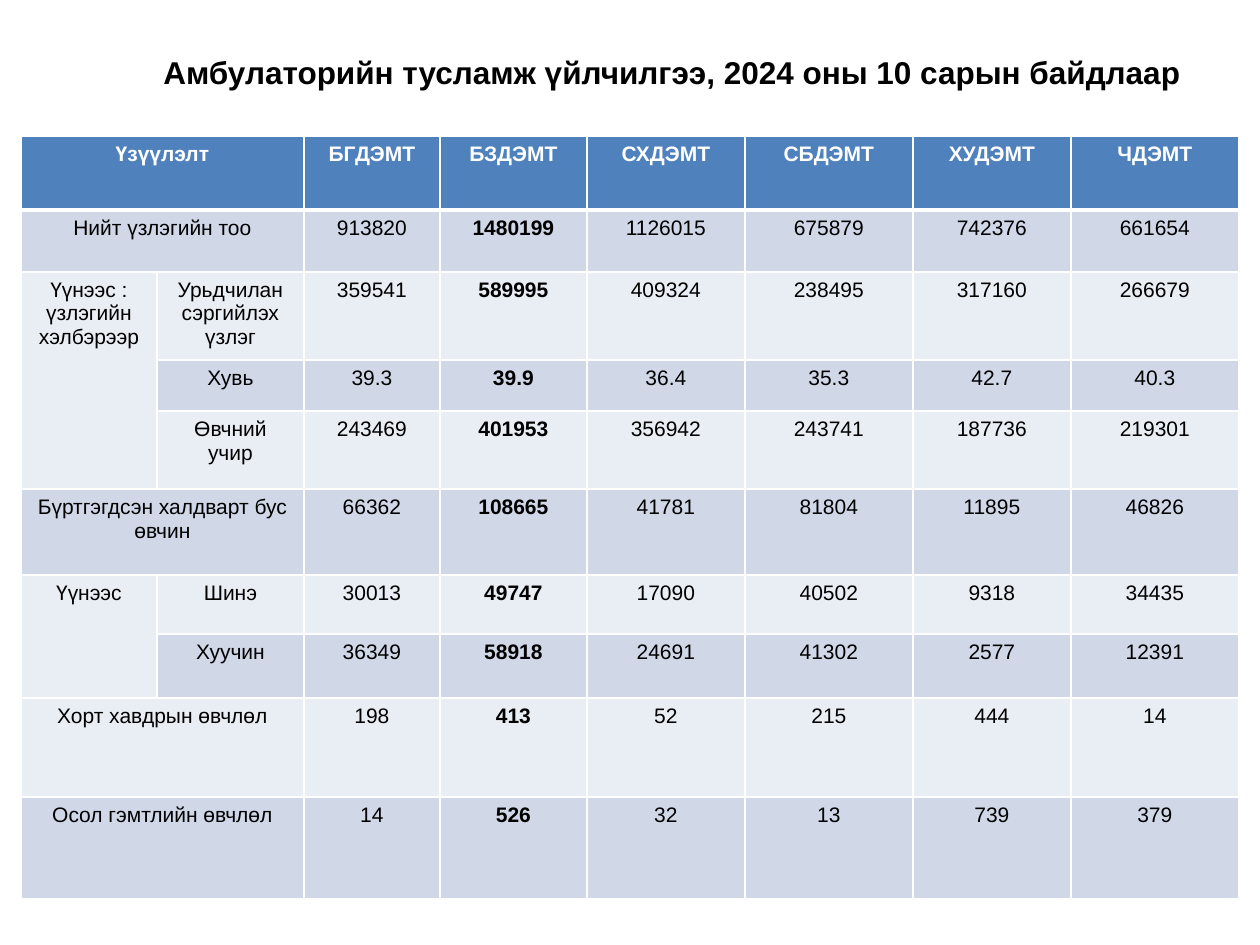
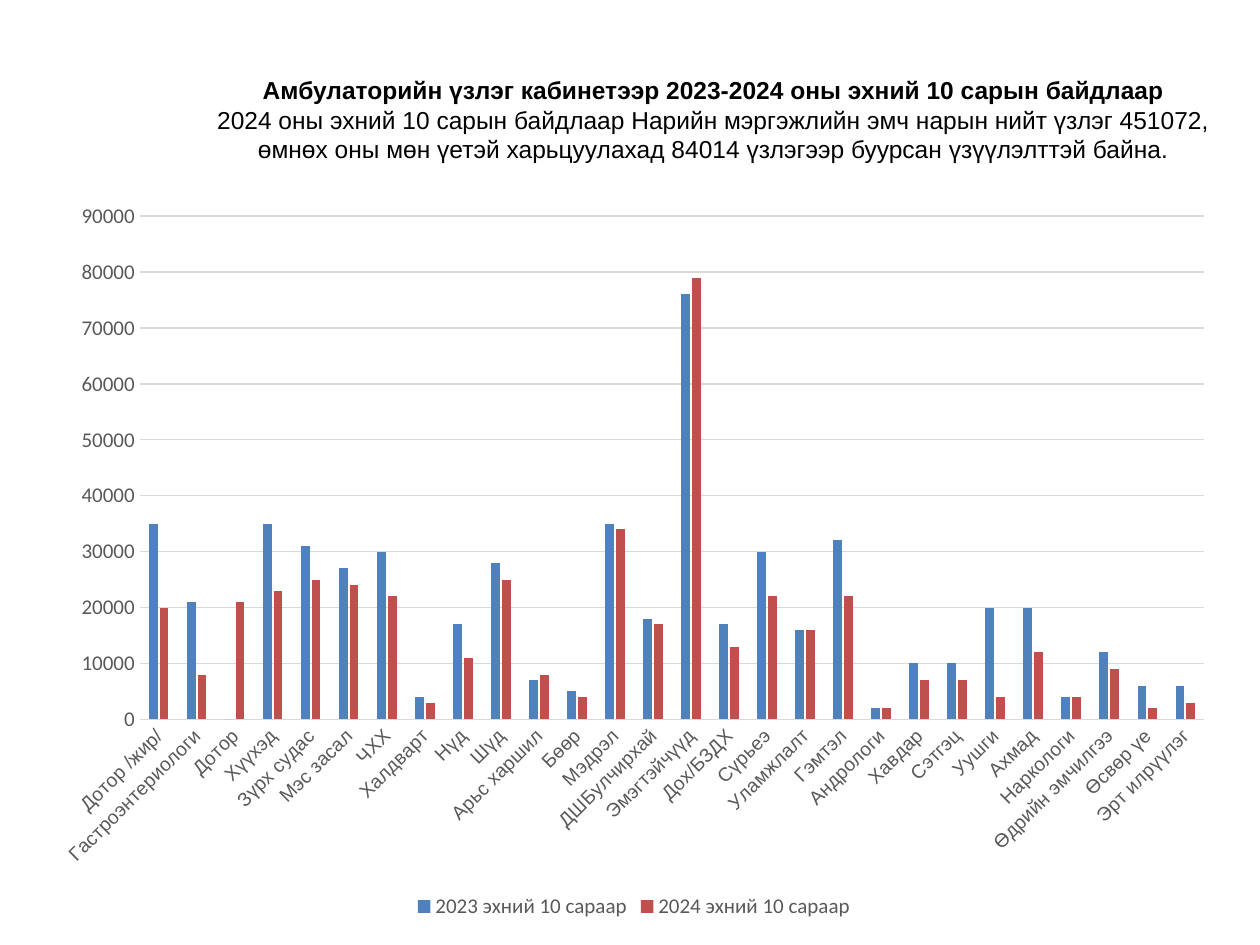
import pptx
import pptx.util
import pptx.chart.data
import pptx.dml.color
import pptx.enum.chart
import pptx.enum.text
import pptx.oxml
import pptx.oxml.ns
from dataclasses import dataclass

PIXELS_PER_INCH = 126
SLIDE_SIZE = (1260, 945)


@dataclass(frozen=True)
class Theme:
    text_font: str = "Arial"
    chart_font: str = "Calibri"
    black: str = "000000"
    white: str = "FFFFFF"
    axis_text: str = "595959"
    grid: str = "D9D9D9"
    header: str = "4F81BD"
    bands: tuple = ("E9EDF4", "D0D8E8")
    series: tuple = ("4F81BD", "C0504D")
    table_title_size: int = 18
    chart_title_size: int = 14
    table_size: int = 12
    category_size: int = 11
    chart_size: int = 12
    border: float = 1
    header_border: float = 3
    grid_line: float = 0.75


THEME = Theme()

TABLE_TITLE = "Амбулаторийн тусламж үйлчилгээ, 2024 оны 10 сарын байдлаар"
TABLE_TITLE_BOX = (105, 33, 1134, 78)
TABLE_ORIGIN = (21, 136)
COLUMN_WIDTHS = [136, 147, 136, 147, 158, 168, 158, 168]
ROW_HEIGHTS = [74, 62, 85, 51, 78, 86, 59, 64, 99, 102]
BOLD_COLUMN = 3
# None marks a cell covered by the one to its left or above it.
TABLE_ROWS = [
    ("Үзүүлэлт", None, "БГДЭМТ", "БЗДЭМТ", "СХДЭМТ", "СБДЭМТ", "ХУДЭМТ", "ЧДЭМТ"),
    ("Нийт үзлэгийн тоо", None, "913820", "1480199", "1126015", "675879", "742376", "661654"),
    ("Үүнээс : үзлэгийн хэлбэрээр", "Урьдчилан сэргийлэх үзлэг",
     "359541", "589995", "409324", "238495", "317160", "266679"),
    (None, "Хувь", "39.3", "39.9", "36.4", "35.3", "42.7", "40.3"),
    (None, "Өвчний учир", "243469", "401953", "356942", "243741", "187736", "219301"),
    ("Бүртгэгдсэн халдварт бус өвчин", None,
     "66362", "108665", "41781", "81804", "11895", "46826"),
    ("Үүнээс", "Шинэ", "30013", "49747", "17090", "40502", "9318", "34435"),
    (None, "Хуучин", "36349", "58918", "24691", "41302", "2577", "12391"),
    ("Хорт хавдрын өвчлөл", None, "198", "413", "52", "215", "444", "14"),
    ("Осол гэмтлийн өвчлөл", None, "14", "526", "32", "13", "739", "379"),
]
MERGES = [((row, 0), (row, 1)) for row in (0, 1, 5, 8, 9)]
MERGES += [((2, 0), (4, 0)), ((6, 0), (7, 0))]

CHART_TITLE = "Амбулаторийн үзлэг кабинетээр 2023-2024 оны эхний 10 сарын байдлаар"
CHART_SUMMARY = (
    "2024 оны эхний 10 сарын байдлаар Нарийн мэргэжлийн эмч нарын нийт үзлэг 451072, "
    "өмнөх оны мөн үетэй харьцуулахад 84014 үзлэгээр буурсан үзүүлэлттэй байна."
)
CHART_TITLE_BOX = (199, 39, 1029, 161)
CHART_BOX = (40, 189, 1188, 735)
SERIES_NAMES = ("2023 эхний 10 сараар", "2024 эхний 10 сараар")
VISITS = [
    ("Дотор /жир/", 35000, 20000),
    ("Гастроэнтериологи", 21000, 8000),
    ("Дотор", 0, 21000),
    ("Хүүхэд", 35000, 23000),
    ("Зүрх судас", 31000, 25000),
    ("Мэс засал", 27000, 24000),
    ("ЧХХ", 30000, 22000),
    ("Халдварт", 4000, 3000),
    ("Нүд", 17000, 11000),
    ("Шүд", 28000, 25000),
    ("Арьс харшил", 7000, 8000),
    ("Бөөр", 5000, 4000),
    ("Мэдрэл", 35000, 34000),
    ("ДШБулчирхай", 18000, 17000),
    ("Эмэгтэйчүүд", 76000, 79000),
    ("Дох/БЗДХ", 17000, 13000),
    ("Сүрьеэ", 30000, 22000),
    ("Уламжлалт", 16000, 16000),
    ("Гэмтэл", 32000, 22000),
    ("Андрологи", 2000, 2000),
    ("Хавдар", 10000, 7000),
    ("Сэтгэц", 10000, 7000),
    ("Уушги", 20000, 4000),
    ("Ахмад", 20000, 12000),
    ("Наркологи", 4000, 4000),
    ("Өдрийн эмчилгээ", 12000, 9000),
    ("Өсвөр үе", 6000, 2000),
    ("Эрт илрүүлэг", 6000, 3000),
]


def emu(pixels):
    return pptx.util.Emu(round(pixels * 914400 / PIXELS_PER_INCH))


def rgb(color):
    return pptx.dml.color.RGBColor.from_string(color)


def style_font(font, size, color, name=THEME.text_font, bold=False):
    font.name = name
    font.size = pptx.util.Pt(size)
    font.color.rgb = rgb(color)
    font.bold = bold


def add_title(slide, box, size, heading, summary=None):
    """Add a centred bold heading, with an optional plain summary under it."""
    frame = slide.shapes.add_textbox(*map(emu, box)).text_frame
    frame.word_wrap = True
    frame.vertical_anchor = pptx.enum.text.MSO_ANCHOR.MIDDLE
    paragraph = frame.paragraphs[0]
    paragraph.alignment = pptx.enum.text.PP_ALIGN.CENTER
    style_font(paragraph.font, size, THEME.black)
    run = paragraph.add_run()
    run.text = heading
    run.font.bold = True
    if summary:
        paragraph.add_line_break()
        paragraph.add_run().text = summary


def set_borders(cell, top, bottom):
    """Draw white borders; top and bottom are widths in points."""
    properties = cell._tc.get_or_add_tcPr()
    widths = {"L": THEME.border, "R": THEME.border, "T": top, "B": bottom}
    for side, width in widths.items():
        properties.append(pptx.oxml.parse_xml(
            f'<a:ln{side} {pptx.oxml.ns.nsdecls("a")} w="{pptx.util.Pt(width)}">'
            f'<a:solidFill><a:srgbClr val="{THEME.white}"/></a:solidFill></a:ln{side}>'
        ))


def fill_cell(cell, row, column, text):
    is_header = row == 0
    set_borders(
        cell,
        top=THEME.header_border if row == 1 else THEME.border,
        bottom=THEME.header_border if is_header else THEME.border,
    )
    cell.fill.solid()
    cell.fill.fore_color.rgb = rgb(THEME.header if is_header else THEME.bands[row % 2])
    if text is not None:
        cell.text = text
    paragraph = cell.text_frame.paragraphs[0]
    paragraph.alignment = pptx.enum.text.PP_ALIGN.CENTER
    style_font(
        paragraph.font,
        THEME.table_size,
        THEME.white if is_header else THEME.black,
        bold=is_header or column == BOLD_COLUMN,
    )


def add_visits_table(slide):
    size = (sum(COLUMN_WIDTHS), sum(ROW_HEIGHTS))
    table = slide.shapes.add_table(
        len(ROW_HEIGHTS), len(COLUMN_WIDTHS), *map(emu, TABLE_ORIGIN + size)
    ).table
    for column, width in zip(table.columns, COLUMN_WIDTHS):
        column.width = emu(width)
    for row, height in zip(table.rows, ROW_HEIGHTS):
        row.height = emu(height)
    for row, texts in enumerate(TABLE_ROWS):
        for column, text in enumerate(texts):
            fill_cell(table.cell(row, column), row, column, text)
    for first, last in MERGES:
        table.cell(*first).merge(table.cell(*last))


def style_line(line):
    line.color.rgb = rgb(THEME.grid)
    line.width = pptx.util.Pt(THEME.grid_line)


def style_axes(chart):
    for axis in (chart.category_axis, chart.value_axis):
        axis.major_tick_mark = pptx.enum.chart.XL_TICK_MARK.NONE
        axis.minor_tick_mark = pptx.enum.chart.XL_TICK_MARK.NONE
    categories, values = chart.category_axis, chart.value_axis
    style_font(categories.tick_labels.font, THEME.category_size, THEME.axis_text)
    categories._element.txPr.find(pptx.oxml.ns.qn("a:bodyPr")).set("rot", "-2700000")
    style_line(categories.format.line)

    style_font(values.tick_labels.font, THEME.chart_size, THEME.axis_text, THEME.chart_font)
    values.minimum_scale, values.maximum_scale, values.major_unit = 0, 90000, 10000
    values.format.line.fill.background()
    style_line(values.major_gridlines.format.line)


def add_visits_chart(slide):
    categories, *series_values = zip(*VISITS)
    data = pptx.chart.data.CategoryChartData()
    data.categories = categories
    for name, values in zip(SERIES_NAMES, series_values):
        data.add_series(name, values)
    chart = slide.shapes.add_chart(
        pptx.enum.chart.XL_CHART_TYPE.COLUMN_CLUSTERED, *map(emu, CHART_BOX), data
    ).chart
    chart.has_title = False
    style_font(chart.font, THEME.chart_size, THEME.axis_text, THEME.chart_font)

    plot = chart.plots[0]
    plot.vary_by_categories = False
    plot.gap_width = 219
    plot.overlap = -27
    for series, color in zip(plot.series, THEME.series):
        series.format.fill.solid()
        series.format.fill.fore_color.rgb = rgb(color)
    style_axes(chart)

    chart.has_legend = True
    chart.legend.position = pptx.enum.chart.XL_LEGEND_POSITION.BOTTOM
    chart.legend.include_in_layout = False
    style_font(chart.legend.font, THEME.chart_size, THEME.axis_text, THEME.chart_font)


def main():
    presentation = pptx.Presentation()
    presentation.slide_width, presentation.slide_height = map(emu, SLIDE_SIZE)
    blank = presentation.slide_layouts[6]

    table_slide = presentation.slides.add_slide(blank)
    add_title(table_slide, TABLE_TITLE_BOX, THEME.table_title_size, TABLE_TITLE)
    add_visits_table(table_slide)

    chart_slide = presentation.slides.add_slide(blank)
    add_title(chart_slide, CHART_TITLE_BOX, THEME.chart_title_size, CHART_TITLE, CHART_SUMMARY)
    add_visits_chart(chart_slide)

    presentation.save("out.pptx")


if __name__ == "__main__":
    main()
